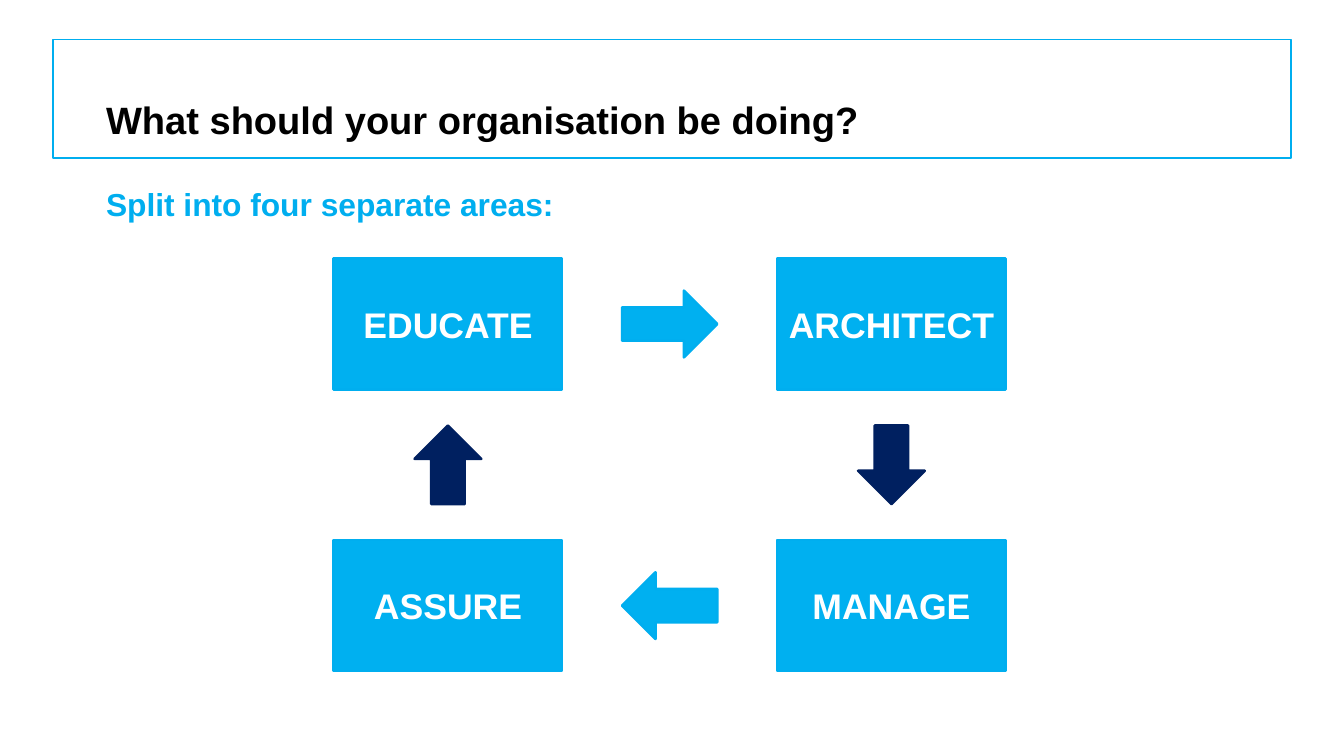
from dataclasses import dataclass

from lxml import etree
from pptx import Presentation
from pptx.dml.color import RGBColor
from pptx.enum import shapes, text
from pptx.oxml.ns import qn
from pptx.util import Inches, Pt

SKY, CYAN, NAVY = "00B0F0", "00AEEF", "002060"
WHITE, BLACK = "FFFFFF", "000000"
LEFT, RIGHT, TOP, BOTTOM = 3.65, 8.5, 2.83, 5.91
AREA_WIDTH, AREA_HEIGHT, ARROW_HEIGHT = 2.5, 1.43, 0.73


@dataclass
class Area:
    label: str
    left: float
    top: float


@dataclass
class Arrow:
    center_x: float
    center_y: float
    length: float
    rotation: int
    fill: str
    line: str


def color(value):
    return RGBColor.from_string(value)


def style_paragraph(paragraph, size: float, value: str, align) -> None:
    paragraph.alignment = align
    paragraph.font.name = "Arial"
    paragraph.font.size = Pt(size)
    paragraph.font.bold = True
    paragraph.font.color.rgb = color(value)


def add_filled(slide, kind, left: float, top: float, width: float,
               height: float, fill: str, line: str):
    shape = slide.shapes.add_shape(
        kind, Inches(left), Inches(top), Inches(width), Inches(height))
    shape.shadow.inherit = False
    shape.fill.solid()
    shape.fill.fore_color.rgb = color(fill)
    shape.line.color.rgb = color(line)
    shape.line.width = Pt(2)
    return shape


def add_area(slide, area: Area) -> None:
    box = add_filled(slide, shapes.MSO_SHAPE.RECTANGLE, area.left, area.top,
                     AREA_WIDTH, AREA_HEIGHT, SKY, CYAN)
    frame = box.text_frame
    frame.text = area.label
    frame.vertical_anchor = text.MSO_ANCHOR.MIDDLE
    style_paragraph(frame.paragraphs[0], 28, WHITE, text.PP_ALIGN.CENTER)


def add_arrow(slide, arrow: Arrow) -> None:
    shape = add_filled(slide, shapes.MSO_SHAPE.RIGHT_ARROW,
                       arrow.center_x - arrow.length / 2,
                       arrow.center_y - ARROW_HEIGHT / 2,
                       arrow.length, ARROW_HEIGHT, arrow.fill, arrow.line)
    shape.rotation = arrow.rotation


def fill_placeholder(holder, wording: str, left: float, top: float,
                     width: float, height: float, anchor):
    holder.left, holder.top = Inches(left), Inches(top)
    holder.width, holder.height = Inches(width), Inches(height)
    frame = holder.text_frame
    frame.text = wording
    frame.margin_left = frame.margin_right = 0
    frame.margin_top = frame.margin_bottom = 0
    frame.vertical_anchor = anchor
    frame.auto_size = text.MSO_AUTO_SIZE.NONE
    frame.word_wrap = True
    return frame.paragraphs[0]


def main() -> None:
    deck = Presentation()
    deck.slide_width, deck.slide_height = Inches(14.7), Inches(8.27)
    slide = deck.slides.add_slide(deck.slide_layouts[1])

    title_frame = slide.shapes.add_shape(
        shapes.MSO_SHAPE.RECTANGLE, Inches(0.58), Inches(0.43),
        Inches(13.54), Inches(1.3))
    title_frame.shadow.inherit = False
    title_frame.fill.background()
    title_frame.line.color.rgb = color(CYAN)
    title_frame.line.width = Pt(1)

    title = fill_placeholder(
        slide.shapes.title, "What should your organisation be doing?",
        1.16, 0.43, 10.47, 1.13, text.MSO_ANCHOR.BOTTOM)
    style_paragraph(title, 30, BLACK, text.PP_ALIGN.LEFT)

    intro = fill_placeholder(
        slide.placeholders[1], "Split into four separate areas:",
        1.16, 2.05, 12.38, 5.34, text.MSO_ANCHOR.TOP)
    properties = intro._p.get_or_add_pPr()
    properties.set("marL", str(Inches(0.38)))
    properties.set("indent", str(Inches(-0.38)))
    etree.SubElement(properties, qn("a:buNone"))
    intro.line_spacing = 0.95
    intro.space_before = Pt(0)
    style_paragraph(intro, 25, CYAN, text.PP_ALIGN.LEFT)

    for area in (Area("EDUCATE", LEFT, TOP), Area("ARCHITECT", RIGHT, TOP),
                 Area("MANAGE", RIGHT, BOTTOM), Area("ASSURE", LEFT, BOTTOM)):
        add_area(slide, area)

    half_width, half_height = AREA_WIDTH / 2, AREA_HEIGHT / 2
    middle_x = (LEFT + RIGHT) / 2 + half_width
    middle_y = (TOP + BOTTOM) / 2 + half_height
    for arrow in (
            Arrow(middle_x, TOP + half_height, 1.04, 0, SKY, CYAN),
            Arrow(RIGHT + half_width, middle_y, 0.86, 90, NAVY, NAVY),
            Arrow(middle_x, BOTTOM + half_height, 1.04, 180, SKY, CYAN),
            Arrow(LEFT + half_width, middle_y, 0.86, 270, NAVY, NAVY)):
        add_arrow(slide, arrow)

    deck.save("out.pptx")


if __name__ == "__main__":
    main()
